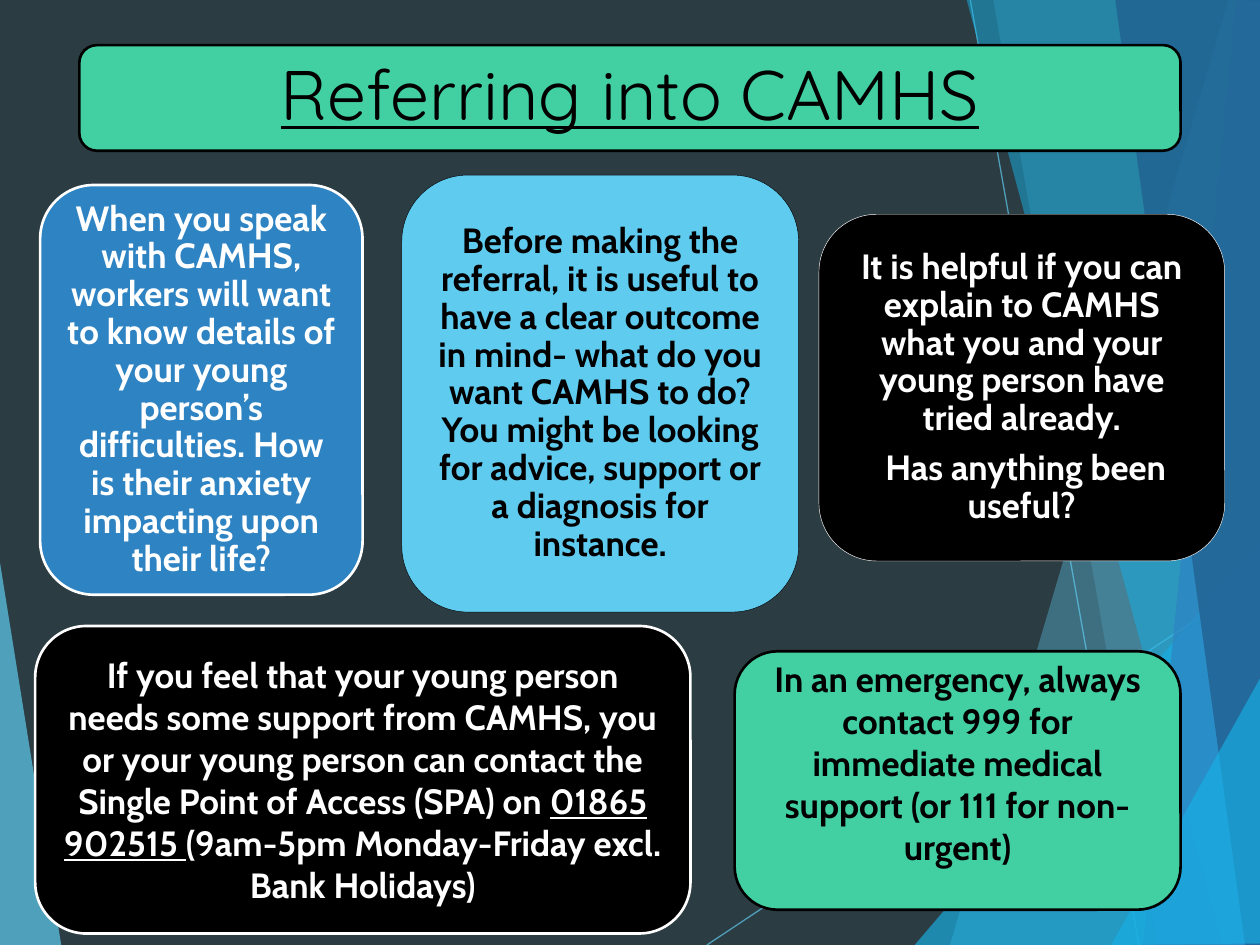
from dataclasses import dataclass

from lxml import etree
from pptx import Presentation
from pptx.dml.color import RGBColor
from pptx.enum.shapes import MSO_CONNECTOR, MSO_SHAPE
from pptx.enum.text import MSO_ANCHOR, PP_ALIGN
from pptx.oxml.ns import qn
from pptx.util import Cm, Pt

ROUNDED = MSO_SHAPE.ROUNDED_RECTANGLE
STRAIGHT = MSO_CONNECTOR.STRAIGHT
MIDDLE = MSO_ANCHOR.MIDDLE
CENTER = PP_ALIGN.CENTER


@dataclass(frozen=True)
class Theme:
    slate: str = "2C3C43"
    sky: str = "5FCBEF"
    cyan: str = "17B0E4"
    blue: str = "2E83C3"
    navy: str = "226292"
    green: str = "42D0A2"
    black: str = "000000"
    white: str = "FFFFFF"
    title_font: str = "Quicksand"
    body_font: str = "Cabin"
    title_size: int = 40
    body_size: int = 20
    hairline: float = 0.25
    ray: float = 0.75
    outline: float = 1.5


THEME = Theme()
TITLE = {"name": THEME.title_font, "size": Pt(THEME.title_size), "underline": True}
BODY = {"name": THEME.body_font, "size": Pt(THEME.body_size), "bold": True}
TIGHT = {"line_spacing": 0.9, "space_after": Pt(THEME.body_size * 0.35)}
SNUG = (0.21, 0.21, 0.21, 0.21)
ROOMY = (0.43, 0.43, 0.43, 0.43)
STANDARD = (0.25, 0.13, 0.25, 0.13)
RAISED = (0.25, 0.13, 0.25, 0.86)

LEFT_SHARD = ([(-0.03, 11.15), (1.24, 19.08), (-0.03, 19.05)], THEME.sky, 70)
RAYS = [((14.25, 19.05), (25.43, 11.61)), ((19.56, 0), (22.96, 19.05))]
RIGHT_SHARDS = [
    ([(24.77, 0), (19.15, 19.05), (25.45, 19.08), (25.43, 0.03)], THEME.sky, 36),
    ([(20.02, -0.03), (23.34, 19.05), (25.43, 19.05), (25.43, -0.03)], THEME.sky, 20),
    ([(18.44, 19.05), (25.4, 10.9), (25.43, 19.05)], THEME.cyan, 66),
    ([(19.48, -0.03), (24.64, 19.05), (25.43, 19.02), (25.43, -0.03)], THEME.cyan, 50),
    ([(24.92, -0.03), (23.04, 19.05), (25.43, 19.05), (25.4, -0.03)], THEME.blue, 70),
    ([(22.48, -0.03), (25.1, 19.05), (25.45, 19.05), (25.4, -0.03)], THEME.navy, 82),
    ([(22.4, 19.05), (25.45, 13.59), (25.45, 19.02)], THEME.cyan, 66),
]

CARDS = [
    {"place": (1.6, 0.91, 22.2, 2.13), "fill": THEME.green, "line": THEME.black,
     "ink": THEME.black, "font": TITLE, "spacing": TIGHT, "insets": ROOMY,
     "text": [[("Referring into CAMHS", {})]]},
    {"place": (16.51, 4.32, 8.18, 6.99), "fill": THEME.black, "line": THEME.white,
     "width": THEME.hairline, "ink": THEME.white, "spacing": TIGHT, "insets": SNUG,
     "text": [[("It is helpful if you can explain to CAMHS what you and your young "
                "person have tried already.", {})],
              [(" Has anything been useful?", {})]]},
    {"place": (0.81, 3.73, 6.5, 8.26), "fill": THEME.blue, "line": THEME.white,
     "ink": THEME.white, "spacing": TIGHT, "insets": SNUG,
     "text": [[("When you speak with CAMHS, workers will want to know details of your "
                "young person’s difficulties. How is their anxiety impacting upon "
                "their life?", {})]]},
    {"place": (8.1, 3.53, 8, 8.81), "fill": THEME.sky, "line": THEME.black,
     "width": THEME.hairline, "ink": THEME.black, "spacing": TIGHT, "insets": SNUG,
     "text": [[("Before making the referral, it is useful to have a clear outcome in "
                "mind- what do you want CAMHS to do? You might be looking for advice, "
                "support or a diagnosis for instance.", {})]]},
    {"place": (0.71, 12.62, 13.21, 6.2), "fill": THEME.black, "line": THEME.white,
     "ink": THEME.white,
     "text": [[("If you feel that your young person needs some support from CAMHS, you "
                "or your young person can contact the Single Point of Access (SPA) on ", {}),
               ("01865 902515 ", {"underline": True}),
               ("(9am-5pm Monday-Friday excl. Bank Holidays)", {})]]},
    {"place": (14.81, 13.13, 8.99, 5.21), "fill": THEME.green, "line": THEME.black,
     "ink": THEME.black, "insets": RAISED,
     "text": [[("In an emergency, always contact 999 for immediate medical support "
                "(or 111 for non-urgent)", {})]]},
]


def assign(target, values):
    for name, value in values.items():
        setattr(target, name, value)


def set_opacity(shape, percent):
    for color in shape.element.spPr.iter(qn("a:srgbClr")):
        etree.SubElement(color, qn("a:alpha"), val=str(percent * 1000))


class SlideBuilder:
    """Draws styled elements on the current slide."""

    def __init__(self, page, theme):
        self.page = page
        self.theme = theme

    def paint(self, fill, color):
        fill.solid()
        fill.fore_color.rgb = RGBColor.from_string(color)

    def background(self):
        self.paint(self.page.background.fill, self.theme.slate)

    def shard(self, points, color, opacity):
        corners = [(Cm(x), Cm(y)) for x, y in points]
        outline = self.page.shapes.build_freeform(*corners[0])
        outline.add_line_segments(corners[1:], close=True)
        shape = outline.convert_to_shape()
        shape.shadow.inherit = False
        shape.line.fill.background()
        self.paint(shape.fill, color)
        set_opacity(shape, opacity)

    def ray(self, start, end):
        ends = [Cm(value) for value in (*start, *end)]
        line = self.page.shapes.add_connector(STRAIGHT, *ends)
        line.line.width = Pt(self.theme.ray)
        self.paint(line.line.fill, self.theme.sky)
        set_opacity(line, 70)
        etree.SubElement(line.element.spPr, qn("a:effectLst"))

    def card(self, place, fill, line, ink, text, font=BODY, spacing=None,
             insets=STANDARD, width=THEME.outline):
        box = self.page.shapes.add_shape(ROUNDED, *map(Cm, place))
        box.shadow.inherit = False
        self.paint(box.fill, fill)
        self.paint(box.line.fill, line)
        box.line.width = Pt(width)
        frame = box.text_frame
        sides = ("margin_left", "margin_top", "margin_right", "margin_bottom")
        assign(frame, {"word_wrap": True, "vertical_anchor": MIDDLE,
                       **dict(zip(sides, map(Cm, insets)))})
        for index, spans in enumerate(text):
            para = frame.add_paragraph() if index else frame.paragraphs[0]
            assign(para, {"alignment": CENTER, **(spacing or {})})
            for words, extra in spans:
                span = para.add_run()
                span.text = words
                assign(span.font, {**font, **extra})
                span.font.color.rgb = RGBColor.from_string(ink)


def main():
    deck = Presentation()
    assign(deck, {"slide_width": Cm(25.4), "slide_height": Cm(19.05)})
    page = deck.slides.add_slide(deck.slide_layouts[6])
    builder = SlideBuilder(page, THEME)
    builder.background()
    builder.shard(*LEFT_SHARD)
    for ends in RAYS:
        builder.ray(*ends)
    for shard in RIGHT_SHARDS:
        builder.shard(*shard)
    for card in CARDS:
        builder.card(**card)
    deck.save("out.pptx")


if __name__ == "__main__":
    main()
